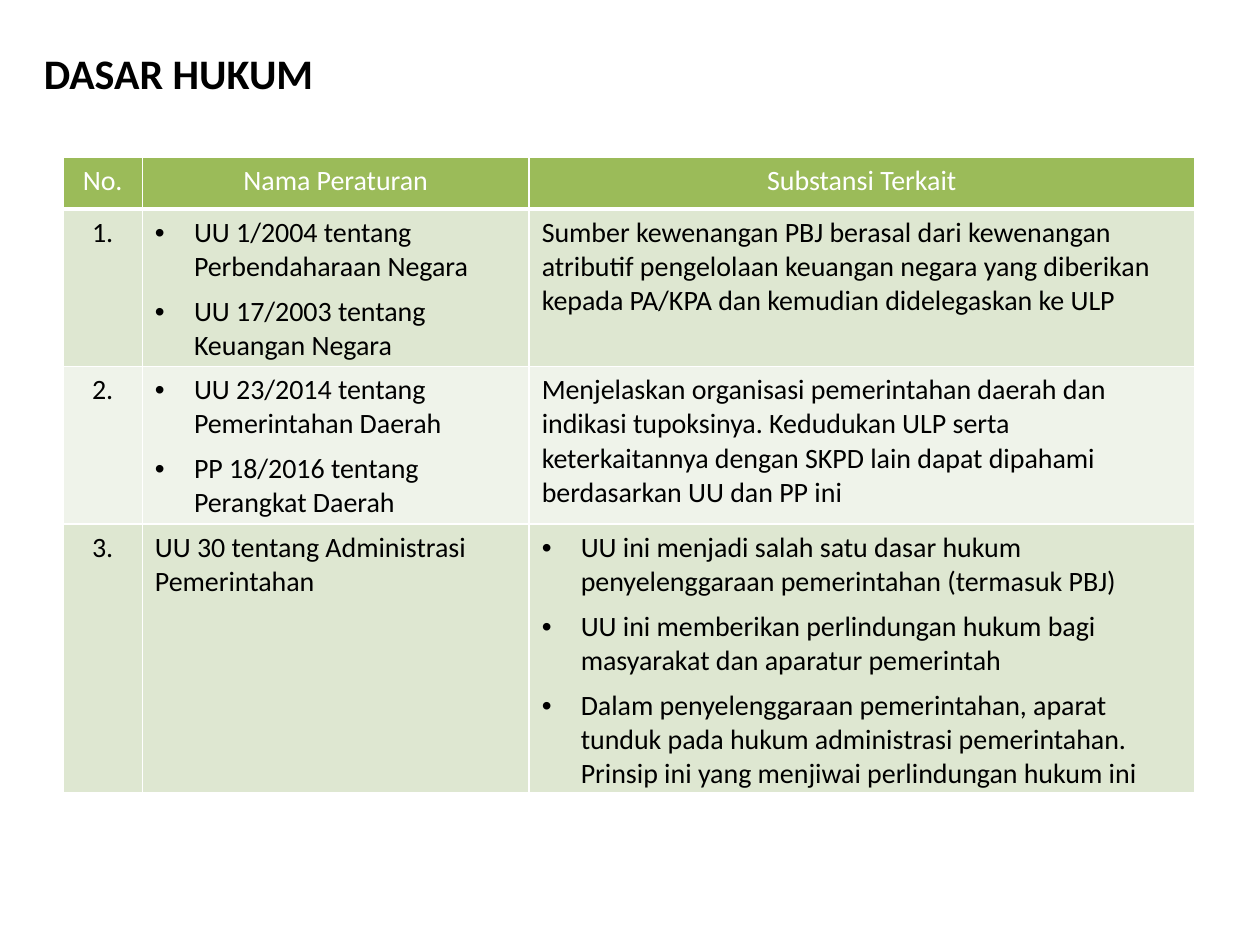
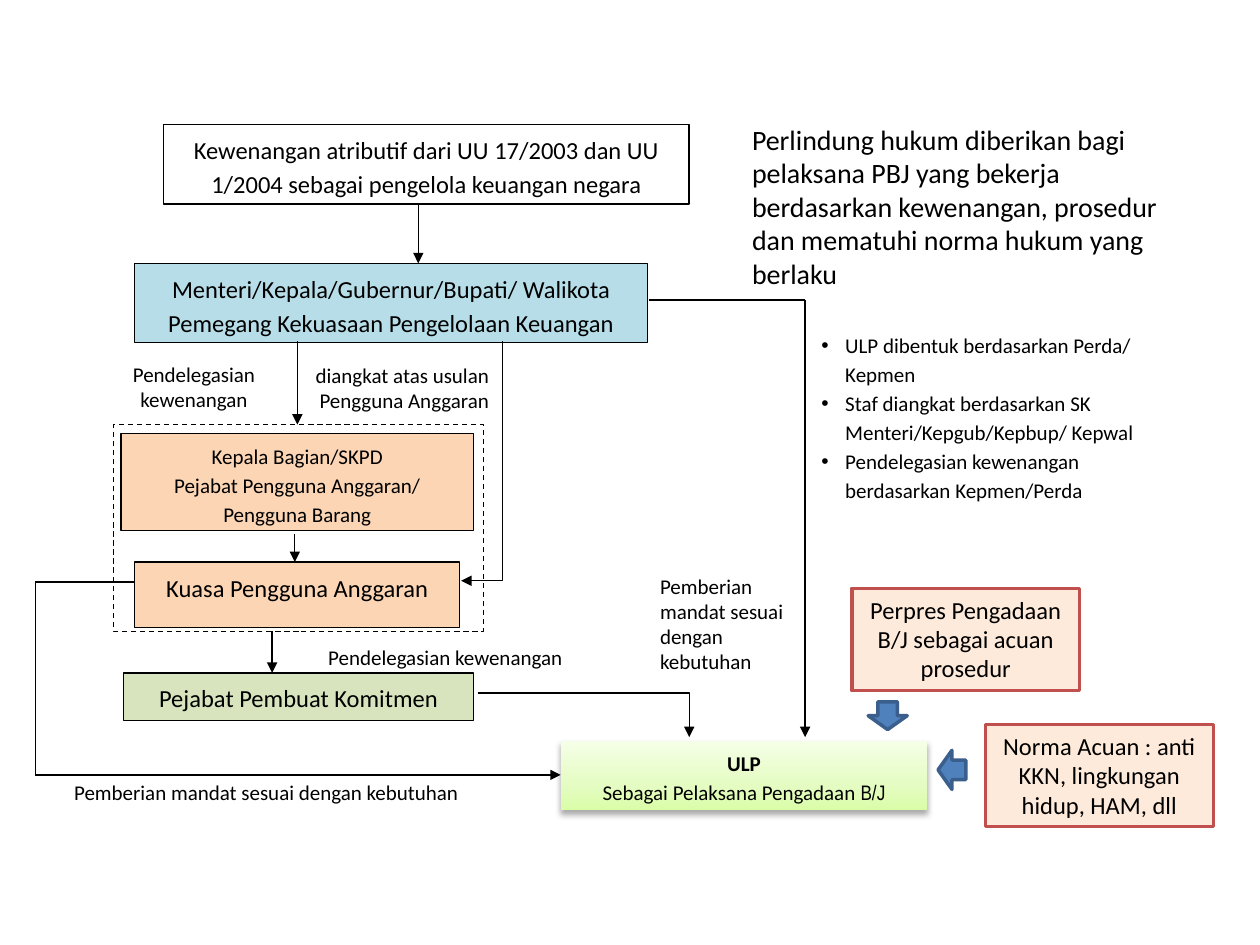
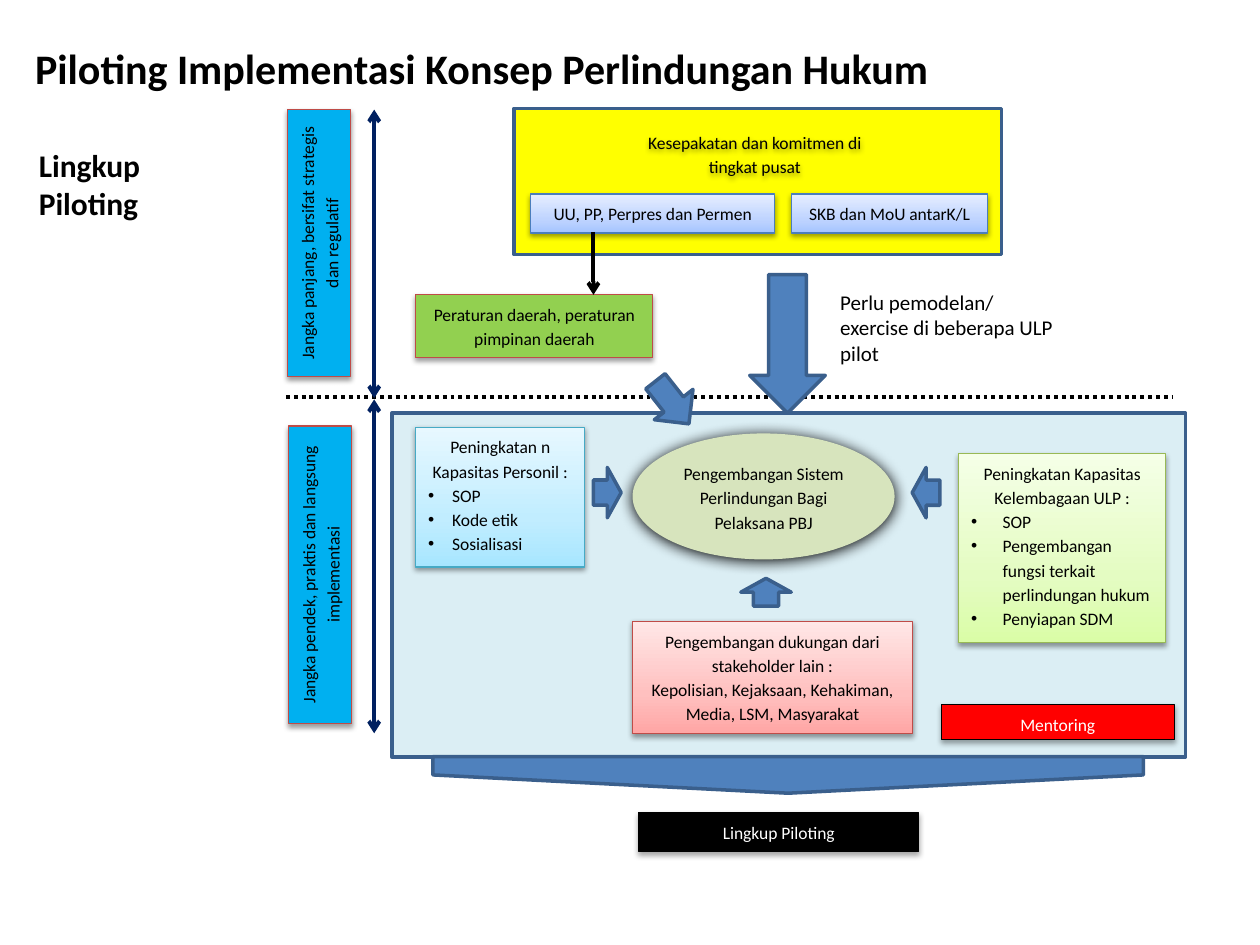
from dataclasses import dataclass
from typing import Optional, Union

import lxml.etree
import pptx
import pptx.dml.color
import pptx.enum.dml
import pptx.enum.shapes
import pptx.enum.text
import pptx.oxml.ns
import pptx.util

RGB = pptx.dml.color.RGBColor
Kind = pptx.enum.shapes.MSO_SHAPE
Dash = pptx.enum.dml.MSO_LINE
Align = pptx.enum.text.PP_ALIGN
Inches = pptx.util.Inches

# Shared look
FONT = "Calibri"
NARROW = "Arial Narrow"
BLACK = RGB(0, 0, 0)
WHITE = RGB(255, 255, 255)
BLUE = RGB(0x4F, 0x81, 0xBD)
DEEP = RGB(0x3A, 0x5F, 0x8C)
NAVY = RGB(0x00, 0x20, 0x60)
SKY = RGB(0x00, 0xB0, 0xF0)
AQUA = RGB(0xB7, 0xDE, 0xE8)
PALE = RGB(0xDB, 0xEE, 0xF4)
TEAL = RGB(0x46, 0xAA, 0xC5)
STEEL = RGB(0x4B, 0x7E, 0xBC)
PEACH = RGB(0xFC, 0xD5, 0xB5)
CREAM = RGB(0xFD, 0xEA, 0xDA)
BRICK = RGB(0xC0, 0x50, 0x4D)
RUST = RGB(0xBF, 0x4C, 0x48)
RED = RGB(0xFF, 0, 0)
YELLOW = RGB(0xFF, 0xFF, 0)
SAGE = RGB(0xD7, 0xE4, 0xBD)
GRASS = RGB(0x92, 0xD0, 0x50)
OLIVE = RGB(0x98, 0xB9, 0x55)
HEAD = RGB(0x9B, 0xBB, 0x59)
BANDS = (RGB(0xDE, 0xE7, 0xD1), RGB(0xEF, 0xF3, 0xEA))

# Colours from bottom to top
Fade = tuple[RGB, RGB, RGB]
LIME: Fade = (RGB(0xDA, 0xFD, 0xA7), RGB(0xE4, 0xFC, 0xC2), RGB(0xF5, 0xFF, 0xE7))
ICE: Fade = (RGB(0xA7, 0xE6, 0xFF), RGB(0xC1, 0xED, 0xFF), RGB(0xE7, 0xF8, 0xFF))
ROSE: Fade = (RGB(0xFF, 0xA6, 0xA5), RGB(0xFF, 0xC0, 0xBF), RGB(0xFF, 0xE7, 0xE7))
HAZE: Fade = (RGB(0xA4, 0xC4, 0xFF), RGB(0xBF, 0xD4, 0xFF), RGB(0xE6, 0xEE, 0xFF))


@dataclass
class Shade:
    alpha: int
    blur: float
    dist: float


SOFT = Shade(38, 3.1, 1.6)
DARK = Shade(35, 3.1, 1.8)
LOW = Shade(32, 3.5, 2.2)
GLOW = Shade(100, 8.5, 1)


@dataclass
class Item:
    text: str
    indent: float = 0  # above zero makes a bullet
    bold: bool = False
    tail: str = ""  # closing run in the narrow font


@dataclass
class Style:
    size: float
    align: Align = Align.CENTER
    lead: float = 1.15
    after: float = 0
    color: RGB = BLACK
    bold: bool = False


@dataclass
class Box:
    x: float
    y: float
    w: float
    h: float
    text: Union[str, list[Item]] = ""
    style: Optional[Style] = None
    kind: Optional[Kind] = Kind.RECTANGLE  # None makes a text box
    fill: Union[RGB, Fade, None] = None
    line: Optional[RGB] = None
    width: float = 0.75
    dash: Optional[Dash] = None
    shade: Optional[Shade] = None
    turn: float = 0
    mid: bool = False


@dataclass
class Link:
    points: list[tuple[float, float]]
    tail: str = ""
    head: str = ""
    color: RGB = BLACK
    width: float = 0.75
    dash: Optional[Dash] = None


TITLE = Style(24, Align.LEFT, 1, bold=True)
LARGE = Style(14)
PLAIN = Style(14, lead=1)
NOTE = Style(12)
TIGHT = Style(12, lead=1)
LEFT = Style(12, Align.LEFT, 1)
SMALL = Style(10)
LIGHT = Style(10, color=WHITE)


def add_tag(node, tag: str, **attrs):
    """Add a drawing element below node."""
    values = {key: str(value) for key, value in attrs.items()}
    return lxml.etree.SubElement(node, pptx.oxml.ns.qn("a:" + tag), values)


def write(frame, text: Union[str, list[Item]], style: Style) -> None:
    items = [Item(text)] if isinstance(text, str) else text
    for spot, item in enumerate(items):
        para = frame.add_paragraph() if spot else frame.paragraphs[0]
        para.add_run().text = item.text
        if item.tail:
            run = para.add_run()
            run.text = item.tail
            run.font.name = NARROW
        para.alignment = Align.LEFT if item.indent else style.align
        if item.indent:
            props = para._p.get_or_add_pPr()
            props.set("marL", str(Inches(item.indent)))
            props.set("indent", str(-Inches(item.indent)))
            add_tag(props, "buFont", typeface="Arial")
            add_tag(props, "buChar", char="•")
        para.line_spacing = style.lead
        para.space_after = pptx.util.Pt(style.after)
        para.font.name = FONT
        para.font.size = pptx.util.Pt(style.size)
        para.font.bold = style.bold or item.bold
        para.font.color.rgb = style.color


def paint(shape, fill: Union[RGB, Fade, None]) -> None:
    if fill is None:
        shape.fill.background()
    elif isinstance(fill, RGB):
        shape.fill.solid()
        shape.fill.fore_color.rgb = fill
    else:
        shape.fill.gradient()
        shape.fill.gradient_angle = 90
        stops = shape._element.spPr.find(".//" + pptx.oxml.ns.qn("a:gsLst"))
        for stop in list(stops):
            stops.remove(stop)
        for place, color in zip((0, 35, 100), fill):
            stop = add_tag(stops, "gs", pos=place * 1000)
            add_tag(stop, "srgbClr", val=color)


def stroke(shape, color: RGB, width: float, dash: Optional[Dash]) -> None:
    shape.line.color.rgb = color
    shape.line.width = pptx.util.Pt(width)
    if dash:
        shape.line.dash_style = dash


def cast(shape, shade: Shade) -> None:
    effects = shape._element.spPr.find(pptx.oxml.ns.qn("a:effectLst"))
    if effects is None:
        effects = add_tag(shape._element.spPr, "effectLst")
    outer = add_tag(effects, "outerShdw", blurRad=pptx.util.Pt(shade.blur),
                    dist=pptx.util.Pt(shade.dist), dir=5400000, rotWithShape=0)
    add_tag(add_tag(outer, "srgbClr", val=BLACK), "alpha", val=shade.alpha * 1000)


def draw_box(slide, box: Box) -> None:
    place = [Inches(n) for n in (box.x, box.y, box.w, box.h)]
    if box.kind is None:
        shape = slide.shapes.add_textbox(*place)
    else:
        shape = slide.shapes.add_shape(box.kind, *place)
        shape.shadow.inherit = False
        paint(shape, box.fill)
        if box.line is None:
            shape.line.fill.background()
        else:
            stroke(shape, box.line, box.width, box.dash)
    shape.rotation = box.turn
    if box.shade:
        cast(shape, box.shade)
    if box.text:
        frame = shape.text_frame
        frame.word_wrap = True
        anchor = pptx.enum.text.MSO_ANCHOR
        frame.vertical_anchor = anchor.MIDDLE if box.mid else anchor.TOP
        write(frame, box.text, box.style)


def draw_link(slide, link: Link) -> None:
    points = [(Inches(x), Inches(y)) for x, y in link.points]
    if len(points) == 2:
        straight = pptx.enum.shapes.MSO_CONNECTOR.STRAIGHT
        shape = slide.shapes.add_connector(straight, *points[0], *points[1])
        add_tag(shape._element.spPr, "effectLst")
    else:
        pen = slide.shapes.build_freeform(*points[0])
        pen.add_line_segments(points[1:], close=False)
        shape = pen.convert_to_shape()
        shape.shadow.inherit = False
        shape.fill.background()
    stroke(shape, link.color, link.width, link.dash)
    line = shape._element.spPr.find(pptx.oxml.ns.qn("a:ln"))
    for tag, tip in (("headEnd", link.head), ("tailEnd", link.tail)):
        if tip:
            add_tag(line, tag, type=tip)


def draw(slide, parts: list[Union[Box, Link]]) -> None:
    for part in parts:
        if isinstance(part, Box):
            draw_box(slide, part)
        else:
            draw_link(slide, part)


def label(x: float, y: float, w: float, h: float, text, style: Style,
          shade: Optional[Shade] = None) -> Box:
    return Box(x, y, w, h, text, style, None, shade=shade)


def arrow(x: float, y: float, w: float, h: float, turn: float = 0,
          kind: Kind = Kind.RIGHT_ARROW) -> Box:
    return Box(x, y, w, h, kind=kind, fill=BLUE, line=DEEP, width=2, turn=turn)


def points(indent: float, *texts: str) -> list[Item]:
    return [Item(text, indent) for text in texts]


def edge(cell, base: float) -> None:
    """Draw white cell borders, the lower one base points wide."""
    props = cell._tc.get_or_add_tcPr()
    for spot, (tag, width) in enumerate(
            (("lnL", 1), ("lnR", 1), ("lnT", 1), ("lnB", base))):
        line = add_tag(props, tag, w=pptx.util.Pt(width))
        add_tag(add_tag(line, "solidFill"), "srgbClr", val=WHITE)
        props.insert(spot, line)


def build_laws(slide) -> None:
    draw(slide, [label(0.25, 0.33, 2.5, 0.5, "DASAR HUKUM", TITLE)])
    rows = [
        ("No.", "Nama Peraturan", "Substansi Terkait"),
        ("1.",
         points(0.31, "UU 1/2004 tentang Perbendaharaan Negara",
                "UU 17/2003 tentang Keuangan Negara"),
         "Sumber kewenangan PBJ berasal dari kewenangan atributif pengelolaan keuangan "
         "negara yang diberikan kepada PA/KPA dan kemudian didelegaskan ke ULP"),
        ("2.",
         points(0.31, "UU 23/2014 tentang Pemerintahan Daerah",
                "PP 18/2016 tentang Perangkat Daerah"),
         "Menjelaskan organisasi pemerintahan daerah dan indikasi tupoksinya. Kedudukan "
         "ULP serta keterkaitannya dengan SKPD lain dapat dipahami berdasarkan UU dan "
         "PP ini"),
        ("3.",
         "UU 30 tentang Administrasi Pemerintahan",
         points(0.31,
                "UU ini menjadi salah satu dasar hukum penyelenggaraan pemerintahan "
                "(termasuk PBJ)",
                "UU ini memberikan perlindungan hukum bagi masyarakat dan aparatur "
                "pemerintah",
                "Dalam penyelenggaraan pemerintahan, aparat tunduk pada hukum "
                "administrasi pemerintahan. Prinsip ini yang menjiwai perlindungan "
                "hukum ini")),
    ]
    table = slide.shapes.add_table(4, 3, Inches(0.5), Inches(1.25),
                                   Inches(8.98), Inches(5.04)).table
    table.first_row = table.horz_banding = False
    for col, width in zip(table.columns, (0.63, 3.07, 5.28)):
        col.width = Inches(width)
    for row, height in zip(table.rows, (0.41, 1.25, 1.25, 2.13)):
        row.height = Inches(height)
    for r, row in enumerate(rows):
        for c, text in enumerate(row):
            cell = table.cell(r, c)
            cell.fill.solid()
            cell.fill.fore_color.rgb = BANDS[(r - 1) % 2] if r else HEAD
            edge(cell, 1 if r else 3)
            align = Align.LEFT if r and c else Align.CENTER
            color = BLACK if r else WHITE
            write(cell.text_frame, text, Style(16, align, 1, 6, color))


def build_flow(slide) -> None:
    tip = "triangle"
    draw(slide, [
        # Chain of offices
        Box(1.3, 0.99, 4.17, 0.63, "Kewenangan atributif dari UU 17/2003 dan UU 1/2004 "
            "sebagai pengelola keuangan negara", LARGE, fill=WHITE, line=BLACK),
        Box(1.07, 2.09, 4.07, 0.63, "Menteri/Kepala/Gubernur/Bupati/ Walikota Pemegang "
            "Kekuasaan Pengelolaan Keuangan", LARGE, fill=AQUA, line=BLACK),
        Box(0.9, 3.37, 2.94, 1.64, line=BLACK, dash=Dash.DASH),
        Box(0.96, 3.44, 2.8, 0.77, [Item("Kepala Bagian/SKPD"),
            Item("Pejabat Pengguna Anggaran/ Pengguna Barang")],
            NOTE, fill=PEACH, line=BLACK),
        Box(1.07, 4.46, 2.58, 0.52, "Kuasa Pengguna Anggaran", LARGE,
            fill=PEACH, line=BLACK),
        Box(0.98, 5.34, 2.78, 0.38, "Pejabat Pembuat Komitmen", LARGE,
            fill=SAGE, line=BLACK),
        Box(4.45, 5.88, 2.91, 0.55, [Item("ULP", bold=True),
            Item("Sebagai Pelaksana Pengadaan ", tail="B/J")],
            NOTE, fill=LIME, shade=LOW),
        # Links
        Link([(3.32, 1.62), (3.32, 2.09)], tip),
        Link([(2.36, 2.71), (2.36, 3.37)], tip),
        Link([(3.99, 2.71), (3.99, 4.61), (3.66, 4.61)], tip),
        Link([(2.34, 4.24), (2.34, 4.46)], tip),
        Link([(2.16, 5.01), (2.16, 5.34)], tip),
        Link([(3.79, 5.5), (5.47, 5.5), (5.47, 5.85)], tip),
        Link([(5.15, 2.38), (6.39, 2.38)]),
        Link([(6.39, 2.38), (6.39, 5.85)], tip),
        Link([(1.07, 4.62), (0.28, 4.62)]),
        Link([(0.28, 4.62), (0.28, 6.15)]),
        Link([(0.28, 6.15), (4.45, 6.15)], tip),
        # Labels
        label(0.52, 2.82, 2.04, 0.44, "Pendelegasian kewenangan", TIGHT),
        label(1.84, 2.83, 2.14, 0.55, "diangkat atas usulan Pengguna Anggaran",
              Style(12, Align.RIGHT, 1)),
        label(2.1, 5.04, 2.87, 0.27, "Pendelegasian kewenangan", NOTE),
        label(5.14, 4.5, 1.2, 1.22, "Pemberian mandat sesuai dengan kebutuhan", LEFT),
        label(0.49, 6.11, 3.7, 0.36, "Pemberian mandat sesuai dengan kebutuhan",
              Style(12, Align.LEFT)),
        label(6.42, 2.56, 2.87, 2.05, points(
            0.19, "ULP dibentuk berdasarkan Perda/ Kepmen",
            "Staf diangkat berdasarkan SK Menteri/Kepgub/Kepbup/ Kepwal",
            "Pendelegasian kewenangan berdasarkan Kepmen/Perda"), NOTE),
        label(5.87, 0.92, 3.65, 1.45, "Perlindung hukum diberikan bagi pelaksana PBJ "
              "yang bekerja berdasarkan kewenangan, prosedur dan mematuhi norma hukum "
              "yang berlaku", Style(16, Align.LEFT, 1)),
        # Norms
        Box(6.76, 4.67, 1.81, 0.81, "Perpres Pengadaan B/J sebagai acuan prosedur",
            PLAIN, fill=CREAM, line=BRICK, width=2),
        Box(7.82, 5.75, 1.81, 0.81, "Norma Acuan : anti KKN, lingkungan hidup, HAM, dll",
            PLAIN, fill=CREAM, line=BRICK, width=2),
        arrow(6.89, 5.57, 0.31, 0.22, kind=Kind.DOWN_ARROW),
        arrow(7.4, 6, 0.31, 0.22, 90, Kind.DOWN_ARROW),
    ])


def build_pilot(slide) -> None:
    def card(x: float, y: float, w: float, h: float, text, fill, line: RGB,
             turn: float = 0) -> Box:
        return Box(x, y, w, h, text, SMALL, fill=fill, line=line, shade=SOFT, turn=turn)

    def plate(x: float, y: float, w: float, h: float, text: str, fill: RGB) -> Box:
        return Box(x, y, w, h, text, LIGHT, fill=fill, line=BLACK, shade=DARK)

    def span(top: float, base: float) -> Link:
        return Link([(2.97, base), (2.97, top)], "arrow", "arrow", NAVY, 2.25)

    draw(slide, [
        label(0.18, 0.29, 8.12, 0.5, "Piloting Implementasi Konsep Perlindungan Hukum",
              TITLE),
        label(0.21, 1.11, 1.5, 0.71, "Lingkup Piloting",
              Style(18, Align.LEFT, 1, bold=True)),
        Box(3.11, 3.28, 6.3, 2.73, fill=PALE, line=DEEP, width=2),
        Link([(2.27, 3.15), (9.31, 3.15)], width=2.25, dash=Dash.ROUND_DOT),
        # Short term
        card(3.3, 3.39, 1.34, 1.11, [Item("Peningkatan n Kapasitas Personil :")]
             + points(0.19, "SOP", "Kode etik", "Sosialisasi"), ICE, TEAL),
        card(7.61, 3.6, 1.64, 1.5, [Item("Peningkatan Kapasitas Kelembagaan ULP :")]
             + points(0.25, "SOP", "Pengembangan fungsi terkait perlindungan hukum",
                      "Penyiapan SDM"), LIME, OLIVE),
        card(5.02, 4.93, 2.22, 0.89,
             [Item("Pengembangan dukungan dari stakeholder lain :"),
              Item("Kepolisian, Kejaksaan, Kehakiman, Media, LSM, Masyarakat")],
             ROSE, RUST),
        Box(5.02, 3.44, 2.08, 1, "Pengembangan Sistem Perlindungan Bagi Pelaksana PBJ",
            SMALL, Kind.OVAL, SAGE, shade=GLOW, mid=True),
        arrow(4.71, 3.71, 0.22, 0.4),
        arrow(7.24, 3.71, 0.22, 0.4, 180),
        arrow(5.7, 2.43, 1.1, 0.6, 90),
        arrow(5.97, 4.5, 0.22, 0.4, 270),
        # Long term
        Box(4.08, 0.86, 3.87, 1.16, fill=YELLOW, line=DEEP, width=2),
        label(5.02, 0.97, 1.94, 0.5, "Kesepakatan dan komitmen di tingkat pusat",
              SMALL, SOFT),
        card(4.21, 1.54, 1.94, 0.31, "UU, PP, Perpres dan Permen", HAZE, STEEL),
        card(6.28, 1.54, 1.56, 0.31, "SKB dan MoU antarK/L", HAZE, STEEL),
        card(3.3, 2.34, 1.88, 0.5, "Peraturan daerah, peraturan pimpinan daerah",
             GRASS, RUST),
        Link([(4.71, 1.84), (4.71, 2.34)], "arrow", width=2.25),
        arrow(5.12, 3, 0.43, 0.39, 51.8),
        label(6.57, 2.25, 1.99, 0.71, "Perlu pemodelan/ exercise di beberapa ULP pilot",
              LEFT),
        # Time spans
        card(1.47, 1.68, 2.12, 0.5, "Jangka panjang, bersifat strategis dan regulatif",
             SKY, RUST, 270),
        card(1.36, 4.31, 2.36, 0.5, "Jangka pendek, praktis dan langsung implementasi",
             SKY, RUST, 270),
        span(0.87, 3.16),
        span(3.17, 5.82),
        # Scope
        plate(5.07, 6.45, 2.22, 0.31, "Lingkup Piloting", BLACK),
        arrow(6.11, 3.33, 0.29, 5.64, 90, Kind.PENTAGON),
        plate(7.47, 5.59, 1.85, 0.28, "Mentoring", RED),
    ])


def main() -> None:
    deck = pptx.Presentation()
    deck.slide_width = Inches(10)
    deck.slide_height = Inches(7.5)
    for build in (build_laws, build_flow, build_pilot):
        build(deck.slides.add_slide(deck.slide_layouts[6]))
    deck.save("out.pptx")


if __name__ == "__main__":
    main()
